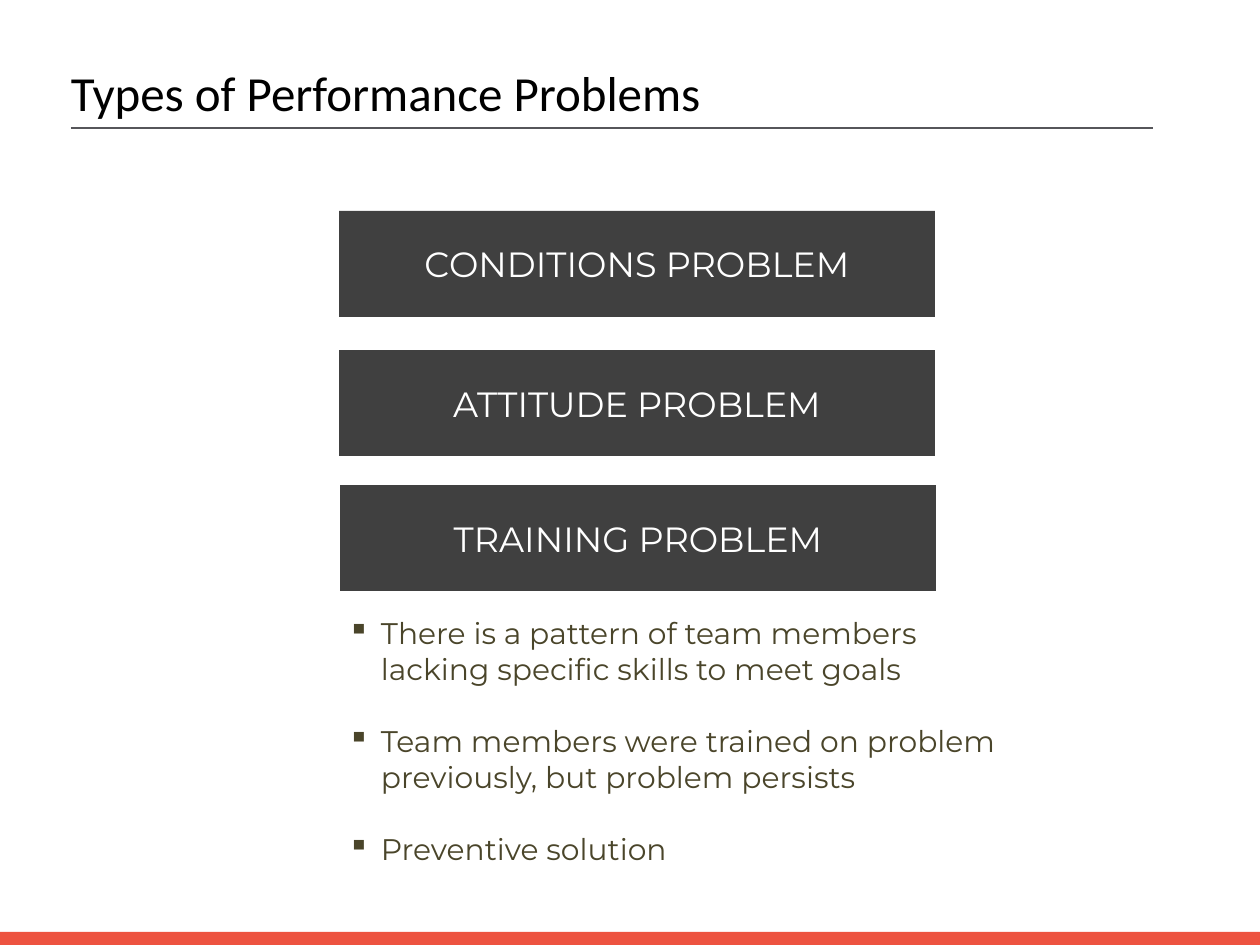
"""Build the slide on types of performance problems."""
from lxml import etree
from pptx import Presentation, util as u
from pptx.dml.color import RGBColor
from pptx.enum import shapes, text
from pptx.oxml import ns

TITLE = "Types of Performance Problems"
PROBLEMS = [
    ("CONDITIONS PROBLEM", 339, 211),
    ("ATTITUDE PROBLEM", 339, 350),
    ("TRAINING PROBLEM", 340, 485),
]
POINTS = [
    "There is a pattern of team members lacking specific skills to meet goals",
    "Team members were trained on problem previously, but problem persists",
    "Preventive solution",
]
COLORS = {"accent": "ED5340", "rule": "56565A", "bar": "404040",
          "title": "000000", "label": "FFFFFF", "body": "4A452A"}
BAR_WIDTH, BAR_HEIGHT = 596, 106
BULLET_INDENT = 33


def px(length):
    return u.Emu(round(length * 914400 / 126))


def color(name):
    return RGBColor.from_string(COLORS[name])


def set_font(para, name, size, shade):
    para.font.name = name
    para.font.size = u.Pt(size)
    para.font.color.rgb = color(shade)


def set_frame(frame, side, anchor):
    frame.word_wrap = True
    frame.vertical_anchor = anchor
    frame.margin_left = frame.margin_right = px(side)
    frame.margin_top = frame.margin_bottom = px(5)


def add_bar(page, place, shade):
    bar = page.shapes.add_shape(shapes.MSO_SHAPE.RECTANGLE, *map(px, place))
    bar.shadow.inherit = False
    bar.fill.solid()
    bar.fill.fore_color.rgb = color(shade)
    bar.line.fill.background()
    return bar


def add_text(page, place, anchor):
    frame = page.shapes.add_textbox(*map(px, place)).text_frame
    set_frame(frame, 9, anchor)
    return frame


def add_bullet(para):
    properties = para._p.get_or_add_pPr()
    properties.set("marL", str(px(BULLET_INDENT)))
    properties.set("indent", str(-px(BULLET_INDENT)))
    etree.SubElement(properties, ns.qn("a:buChar")).set("char", "▪")


def main():
    deck = Presentation()
    deck.slide_width, deck.slide_height = px(1260), px(945)
    page = deck.slides.add_slide(deck.slide_layouts[6])

    add_bar(page, (0, 932, 1260, 13), "accent")

    title = add_text(page, (62, 60, 1133, 63), text.MSO_ANCHOR.MIDDLE).paragraphs[0]
    title.text = TITLE
    set_font(title, "Calibri", 28, "title")

    rule = page.shapes.add_connector(
        shapes.MSO_CONNECTOR.STRAIGHT, px(71), px(128), px(1153), px(128))
    rule.line.color.rgb = color("rule")
    rule.line.width = u.Pt(1)
    etree.SubElement(rule._element.spPr, ns.qn("a:effectLst"))

    for label, left, top in PROBLEMS:
        bar = add_bar(page, (left, top, BAR_WIDTH, BAR_HEIGHT), "bar")
        set_frame(bar.text_frame, 26, text.MSO_ANCHOR.MIDDLE)
        para = bar.text_frame.paragraphs[0]
        para.text = label
        para.alignment = text.PP_ALIGN.CENTER
        set_font(para, "Montserrat", 20, "label")

    body = add_text(page, (339, 610, 678, 331), text.MSO_ANCHOR.TOP)
    for index, point in enumerate(POINTS):
        para = body.add_paragraph() if index else body.paragraphs[0]
        para.text = point
        add_bullet(para)
        if index:
            para.space_before = u.Pt(20.7)
        set_font(para, "Montserrat", 17, "body")

    deck.save("out.pptx")


if __name__ == "__main__":
    main()
